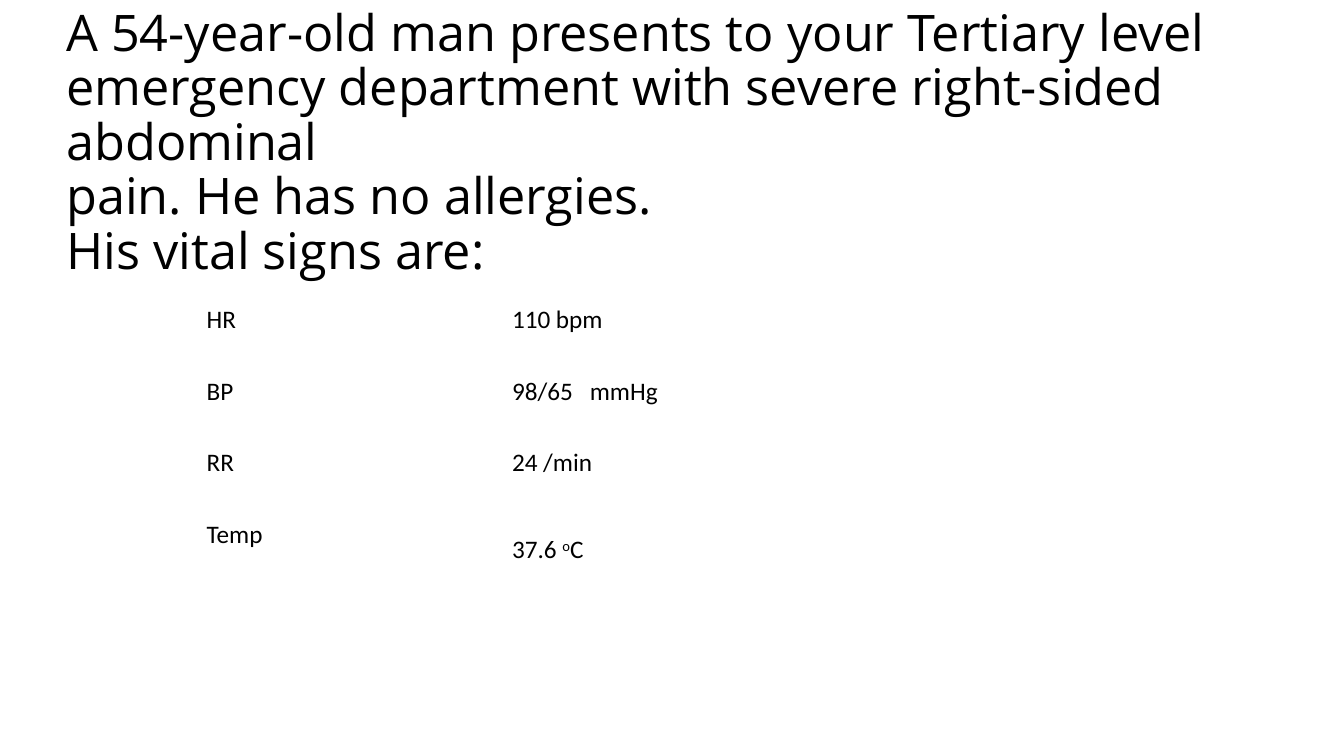
from pptx import Presentation
from pptx.dml.color import RGBColor
from pptx.enum.text import MSO_ANCHOR
from pptx.util import Pt

BLACK = "000000"
HISTORY = [
    "A 54-year-old man presents to your Tertiary level \n"
    "emergency department with severe right-sided abdominal \n"
    "pain. He has no allergies.",
    "His vital signs are:",
]
VITAL_SIGNS = [
    ("HR\n", ["110 bpm\n"]),
    ("BP\n", ["98/65   mmHg\n"]),
    ("RR\n", ["24 /min\n"]),
    ("Temp\n", ["37.6 ", "o", "C"]),
]


def color(value):
    return RGBColor.from_string(value)


def write(para, text, size=18, font="Calibri", fill=BLACK, baseline=0):
    for index, line in enumerate(text.split("\n")):
        if index:
            para.add_line_break()
        if not line:
            continue
        span = para.add_run()
        span.text = line
        span.font.size = Pt(size)
        span.font.name = font
        span.font.color.rgb = color(fill)
        if baseline:
            span._r.get_or_add_rPr().set("baseline", str(baseline * 1000))


def add_history(page, left, top, width, height):
    box = page.shapes.add_textbox(Pt(left), Pt(top), Pt(width), Pt(height))
    frame = box.text_frame
    frame.word_wrap = True
    frame.vertical_anchor = MSO_ANCHOR.MIDDLE
    for index, text in enumerate(HISTORY):
        para = frame.add_paragraph() if index else frame.paragraphs[0]
        para.line_spacing = 0.9
        write(para, text, size=36, font="Open Sans")


def add_vital_signs(page, left, top, width, height):
    table = page.shapes.add_table(
        len(VITAL_SIGNS), 2, Pt(left), Pt(top), Pt(width), Pt(height)
    ).table
    table.first_row = False
    table.horz_banding = False
    table.columns[0].width = Pt(width / 3)
    table.columns[1].width = Pt(width * 2 / 3)
    for row, (label, reading) in enumerate(VITAL_SIGNS):
        for column, spans in enumerate(([label], reading)):
            cell = table.cell(row, column)
            cell.fill.background()
            cell.vertical_anchor = MSO_ANCHOR.MIDDLE
            cell.margin_left = cell.margin_right = Pt(3.6)
            cell.margin_top = cell.margin_bottom = Pt(3.6)
            for text in spans:
                write(cell.text_frame.paragraphs[0], text,
                      baseline=30 if text == "o" else 0)


def main():
    deck = Presentation()
    deck.slide_width, deck.slide_height = Pt(960), Pt(540)
    page = deck.slides.add_slide(deck.slide_layouts[6])
    add_vital_signs(page, 144, 214, 654.5, 204.6)
    add_history(page, 40.3, 12.2, 880, 181.5)
    deck.save("out.pptx")


if __name__ == "__main__":
    main()
